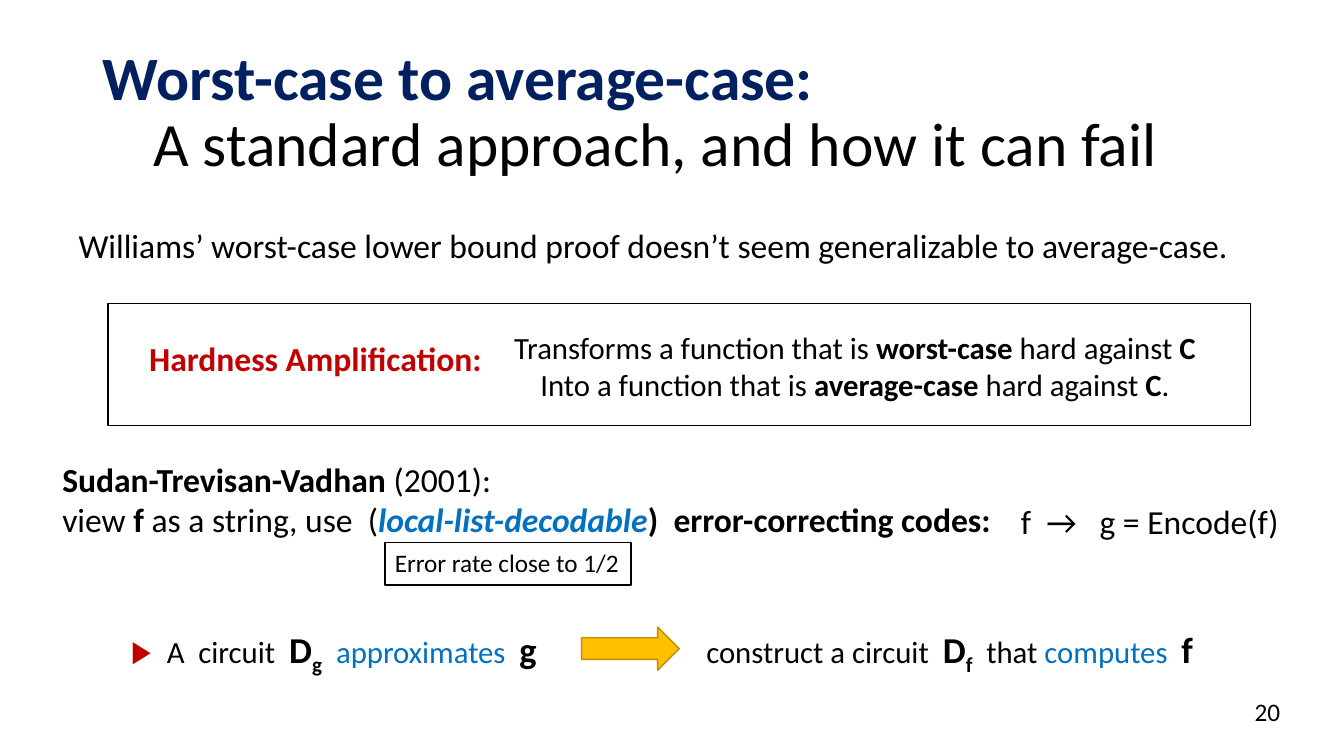
from dataclasses import dataclass, field

from lxml import etree
from pptx import Presentation
from pptx.dml.color import RGBColor
from pptx.enum import shapes, text
from pptx.oxml import ns
from pptx.util import Cm, Pt


@dataclass(frozen=True)
class Theme:
    font: str = "Calibri"
    bullet_font: str = "Roboto"
    black: str = "000000"
    white: str = "FFFFFF"
    navy: str = "002060"
    red: str = "C00000"
    blue: str = "0070C0"
    gold: str = "FFC000"
    dark_gold: str = "BD8E00"
    title: int = 44
    symbol: int = 26
    body: int = 24
    detail: int = 22
    small: int = 18


THEME = Theme()


@dataclass(frozen=True)
class Span:
    text: str
    bold: bool = False
    color: str = THEME.black
    size: int | None = None
    italic: bool = False
    subscript: bool = False


@dataclass(frozen=True)
class Area:
    left: float
    top: float
    width: float
    height: float

    def lengths(self) -> tuple:
        return Cm(self.left), Cm(self.top), Cm(self.width), Cm(self.height)


@dataclass(frozen=True)
class TextBlock:
    area: Area
    paragraphs: list[list[Span]]
    size: int = THEME.body
    align: text.PP_ALIGN = text.PP_ALIGN.LEFT
    anchor: text.MSO_ANCHOR = text.MSO_ANCHOR.TOP


@dataclass(frozen=True)
class Figure:
    kind: shapes.MSO_SHAPE
    area: Area
    fill: str = THEME.white
    line: str = THEME.black
    paragraphs: list[list[Span]] = field(default_factory=list)


def symbol(letter: str, subscript: bool = False) -> Span:
    return Span(letter, bold=True, size=THEME.symbol, subscript=subscript)


# Content
TITLE = TextBlock(Area(2.34, 1.02, 29.21, 3.68), [[
    Span("Worst-case to average-case:", bold=True, color=THEME.navy),
    Span("\n"),
    Span("\tA standard approach, and how it can fail"),
]], THEME.title, anchor=text.MSO_ANCHOR.MIDDLE)

PREMISE = TextBlock(Area(3.05, 15.67, 11.5, 1.37), [[
    Span("A  circuit  "), symbol("D"), symbol("g", subscript=True), Span("  "),
    Span("approximates  ", color=THEME.blue), symbol("g"),
]], THEME.detail)

TEXT_BLOCKS = [
    TextBlock(Area(1.73, 5.54, 30.4, 1.27), [[
        Span("Williams’ worst-case lower bound proof doesn’t seem "
             "generalizable to average-case."),
    ]]),
    TextBlock(Area(3.51, 8.38, 9.58, 1.27), [[
        Span("Hardness Amplification:", bold=True, color=THEME.red),
    ]]),
    TextBlock(Area(12.4, 8.15, 18.29, 2.13), [
        [Span("Transforms a function that is "), Span("worst-case", bold=True),
         Span(" hard against "), Span("C", bold=True)],
        [Span("Into a function that is "), Span("average-case", bold=True),
         Span(" hard against "), Span("C", bold=True), Span(".")],
    ], THEME.detail, text.PP_ALIGN.CENTER),
    TextBlock(Area(1.32, 11.43, 24.21, 2.31), [
        [Span("Sudan-Trevisan-Vadhan", bold=True), Span(" (2001):")],
        [Span("view "), Span("f", bold=True), Span(" as a string, use  ("),
         Span("local-list-decodable", bold=True, color=THEME.blue, italic=True),
         Span(")  error-correcting codes:", bold=True)],
    ]),
    TextBlock(Area(25.48, 12.5, 8.38, 1.27), [[Span("f  →   g = Encode(f)")]]),
    TextBlock(Area(17.55, 15.67, 15, 1.37), [[
        Span("construct a circuit  "), symbol("D"), symbol("f", subscript=True),
        Span("  that "), Span("computes  ", color=THEME.blue), symbol("f"),
    ]], THEME.detail),
    TextBlock(Area(24.89, 17.42, 7.62, 1.02), [[Span("20")]], THEME.small,
              text.PP_ALIGN.RIGHT, text.MSO_ANCHOR.MIDDLE),
]

DEFINITION_FRAME = Figure(shapes.MSO_SHAPE.RECTANGLE, Area(2.72, 7.65, 28.8, 3.07))
FOREGROUND = [
    Figure(shapes.MSO_SHAPE.RIGHT_ARROW, Area(14.66, 15.8, 2.46, 1.09),
           THEME.gold, THEME.dark_gold),
    Figure(shapes.MSO_SHAPE.RECTANGLE, Area(9.7, 13.67, 6.2, 1.07),
           paragraphs=[[Span("Error rate close to 1/2")]]),
]


def add_span(paragraph, span: Span, size: int) -> None:
    if span.text == "\n":
        paragraph.add_line_break()
        return
    run = paragraph.add_run()
    run.text = span.text
    font = run.font
    font.name = THEME.font
    font.size = Pt(span.size or size)
    font.bold = span.bold
    font.italic = span.italic
    font.color.rgb = RGBColor.from_string(span.color)
    if span.subscript:
        run._r.get_or_add_rPr().set("baseline", "-25000")


def write_text(shape, block: TextBlock) -> None:
    frame = shape.text_frame
    frame.word_wrap = True
    frame.auto_size = text.MSO_AUTO_SIZE.NONE
    frame.vertical_anchor = block.anchor
    for index, spans in enumerate(block.paragraphs):
        paragraph = frame.add_paragraph() if index else frame.paragraphs[0]
        paragraph.alignment = block.align
        paragraph.space_before = Pt(0)
        for span in spans:
            add_span(paragraph, span, block.size)


def fill_placeholder(shape, block: TextBlock) -> None:
    shape.left, shape.top, shape.width, shape.height = block.area.lengths()
    write_text(shape, block)


def add_text_block(slide, block: TextBlock) -> None:
    write_text(slide.shapes.add_textbox(*block.area.lengths()), block)


def add_figure(slide, figure: Figure) -> None:
    shape = slide.shapes.add_shape(figure.kind, *figure.area.lengths())
    shape.shadow.inherit = False
    shape.fill.solid()
    shape.fill.fore_color.rgb = RGBColor.from_string(figure.fill)
    shape.line.color.rgb = RGBColor.from_string(figure.line)
    shape.line.width = Pt(1)
    if figure.paragraphs:
        write_text(shape, TextBlock(figure.area, figure.paragraphs, THEME.small))


def set_triangle_bullet(paragraph) -> None:
    properties = paragraph._p.get_or_add_pPr()
    indent = Cm(0.9)
    properties.set("marL", str(indent))
    properties.set("indent", str(-indent))
    color = etree.SubElement(properties, ns.qn("a:buClr"))
    etree.SubElement(color, ns.qn("a:srgbClr"), val=THEME.red)
    etree.SubElement(properties, ns.qn("a:buFont"), typeface=THEME.bullet_font)
    etree.SubElement(properties, ns.qn("a:buChar"), char="▶")


def main() -> None:
    presentation = Presentation()
    presentation.slide_width, presentation.slide_height = Cm(33.87), Cm(19.05)
    slide = presentation.slides.add_slide(presentation.slide_layouts[1])

    # Title and bulleted premise
    title, body = slide.placeholders
    fill_placeholder(title, TITLE)
    title.text_frame.paragraphs[0].line_spacing = 0.9
    fill_placeholder(body, PREMISE)
    set_triangle_bullet(body.text_frame.paragraphs[0])

    # Frame, text, then the arrow and the note above them
    add_figure(slide, DEFINITION_FRAME)
    for block in TEXT_BLOCKS:
        add_text_block(slide, block)
    for figure in FOREGROUND:
        add_figure(slide, figure)

    presentation.save("out.pptx")


if __name__ == "__main__":
    main()
